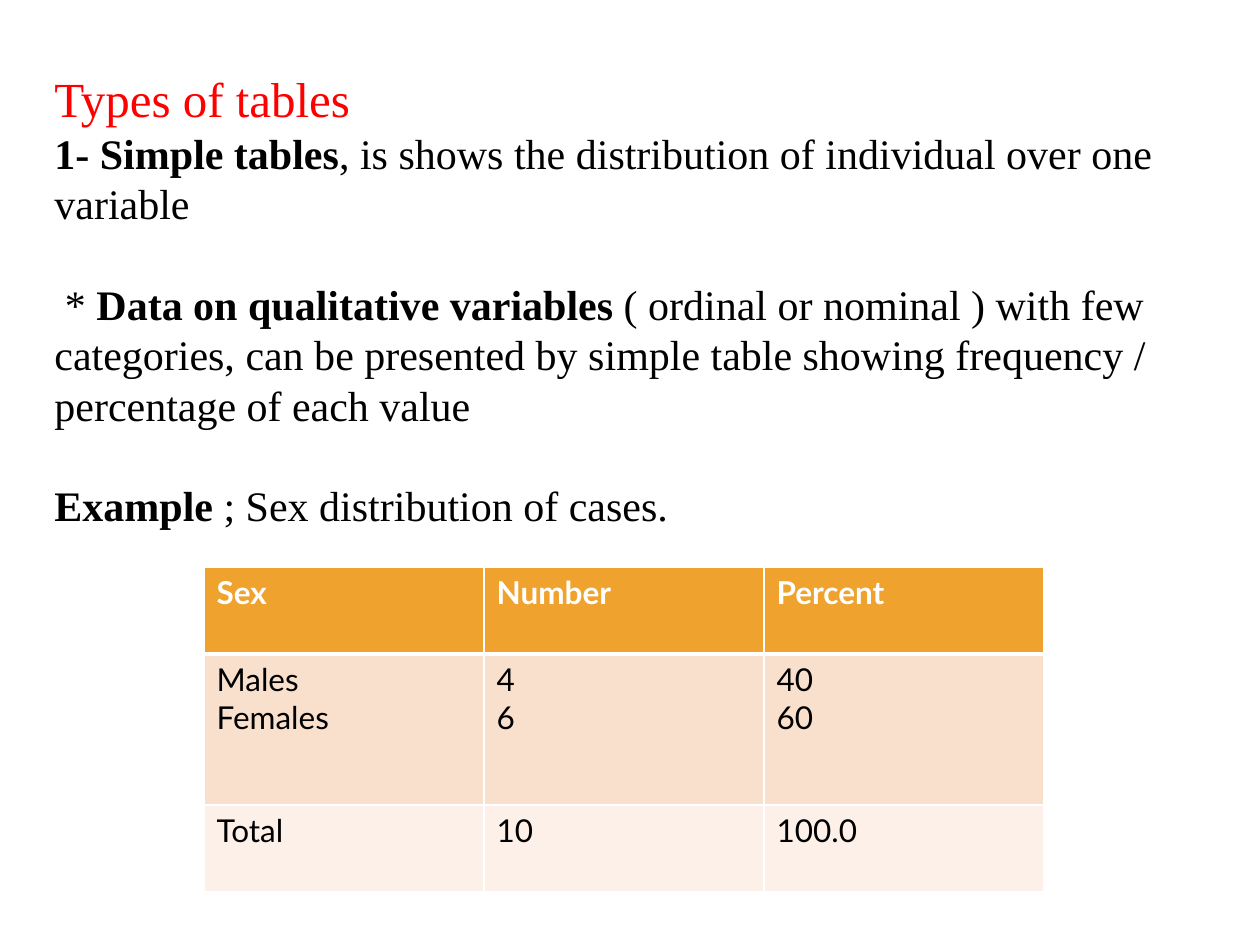
from pptx import Presentation
from pptx.dml.color import RGBColor
from pptx.oxml import parse_xml
from pptx.oxml.ns import nsdecls
from pptx.util import Pt

RED = RGBColor(0xFF, 0x00, 0x00)
BLACK = RGBColor(0x00, 0x00, 0x00)
WHITE = RGBColor(0xFF, 0xFF, 0xFF)
ORANGE = RGBColor(0xF0, 0xA2, 0x2E)
PEACH = RGBColor(0xF9, 0xE0, 0xCD)
CREAM = RGBColor(0xFC, 0xF0, 0xE8)


class SlideBuilder:
    text_font = "Times New Roman"
    table_font = "Lato"
    line_height = Pt(28.8)

    def __init__(self, slide):
        self.slide = slide

    def style(self, font, name, size, color):
        font.name, font.size = name, Pt(size)
        font.color.rgb = color

    def text(self, left, top, width, height, heading, body):
        """Body items are (space before, [(run text, bold), ...])."""
        box = self.slide.shapes.add_textbox(Pt(left), Pt(top), Pt(width), Pt(height))
        frame = box.text_frame
        frame.word_wrap = True
        frame.margin_top = Pt(6.6)
        title = frame.paragraphs[0]
        title.text = heading
        self.style(title.font, self.text_font, 28, RED)
        for gap, runs in body:
            paragraph = frame.add_paragraph()
            paragraph.line_spacing = self.line_height
            paragraph.space_before = gap
            self.style(paragraph.font, self.text_font, 24, BLACK)
            for words, bold in runs:
                run = paragraph.add_run()
                run.text = words
                run.font.bold = bold

    def border(self, cell, **widths):
        for side, width in widths.items():
            cell._tc.get_or_add_tcPr().append(parse_xml(
                f'<a:ln{side} {nsdecls("a")} w="{Pt(width)}"><a:solidFill>'
                f'<a:srgbClr val="{WHITE}"/></a:solidFill></a:ln{side}>'))

    def table(self, left, top, column_width, row_heights, rows, fills):
        columns = len(rows[0])
        table = self.slide.shapes.add_table(
            len(rows), columns, Pt(left), Pt(top),
            Pt(column_width * columns), Pt(sum(row_heights))).table
        table.horz_banding = False
        for column in table.columns:
            column.width = Pt(column_width)
        for r, (height, entries, fill) in enumerate(zip(row_heights, rows, fills)):
            table.rows[r].height = Pt(height)
            is_header = r == 0
            for c, entry in enumerate(entries):
                cell = table.cell(r, c)
                # Heavy rule between the header and the first data row
                self.border(cell, L=1, R=1, T=3 if r == 1 else 1, B=3 if is_header else 1)
                cell.fill.solid()
                cell.fill.fore_color.rgb = fill
                cell.text = entry
                for paragraph in cell.text_frame.paragraphs:
                    self.style(paragraph.font, self.table_font, 18,
                               WHITE if is_header else BLACK)
                    paragraph.font.bold = is_header


def main():
    presentation = Presentation()
    presentation.slide_width, presentation.slide_height = Pt(720), Pt(540)
    builder = SlideBuilder(presentation.slides.add_slide(presentation.slide_layouts[6]))

    # Explanation
    gap = builder.line_height
    builder.text(24, 32.4, 666, 448.6, "Types of tables", [
        (Pt(0), [("1- Simple tables", True),
                 (", is shows the distribution of individual over one variable", False)]),
        (gap, [(" * ", False), ("Data on qualitative variables ", True),
               ("( ordinal or nominal ) with few categories, can be presented by "
                "simple table showing frequency / percentage of each value", False)]),
        (gap, [("Example ", True), ("; Sex distribution of cases.", False)]),
    ])

    # Example table
    builder.table(116.6, 324, 160, [49.7, 86.4, 49.7], [
        ["Sex", "Number", "Percent"],
        ["Males\nFemales", "4\n6", "40\n60"],
        ["Total", "10", "100.0"],
    ], [ORANGE, PEACH, CREAM])

    presentation.save("out.pptx")


if __name__ == "__main__":
    main()
